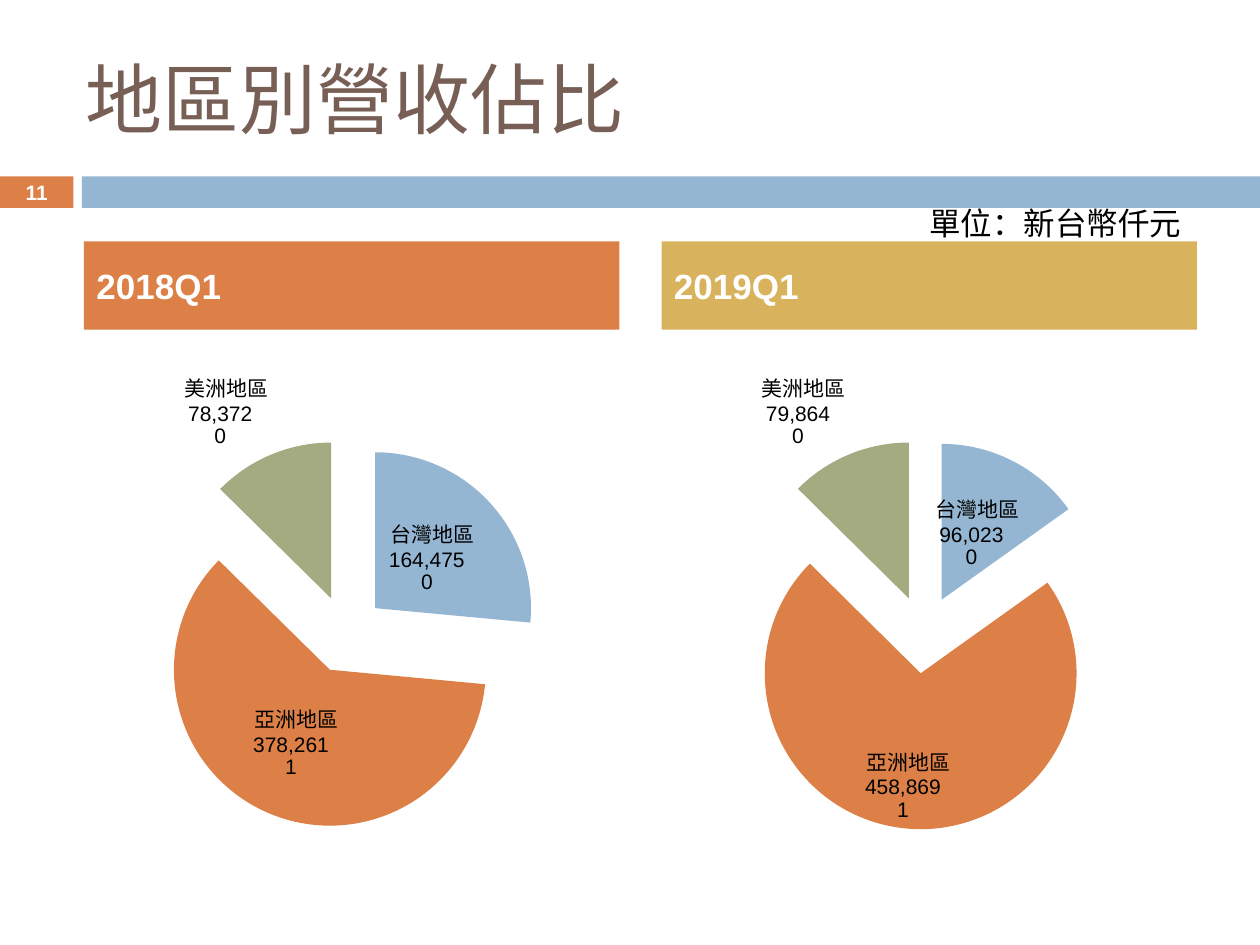
"""Build the slide comparing revenue share by region for two quarters."""
from lxml import etree
from pptx import Presentation
from pptx.chart.data import CategoryChartData
from pptx.dml.color import RGBColor
from pptx.enum.chart import XL_CHART_TYPE as ChartType, XL_LABEL_POSITION as LabelPos
from pptx.enum.shapes import MSO_SHAPE as Shape
from pptx.enum.text import MSO_ANCHOR as Anchor, PP_ALIGN as Align
from pptx.oxml.ns import qn
from pptx.util import Pt

ORANGE = RGBColor(0xDD, 0x80, 0x47)
BLUE = RGBColor(0x94, 0xB6, 0xD2)
GOLD = RGBColor(0xD8, 0xB2, 0x5C)
GREEN = RGBColor(0xA5, 0xAB, 0x81)
BROWN = RGBColor(0x77, 0x5F, 0x55)
WHITE = RGBColor(0xFF, 0xFF, 0xFF)
BLACK = RGBColor(0, 0, 0)
FONT = "Arial"
VALUE_FORMAT = r"#,##0\ _);[Red]\(#,##0\)_);\-\ \ \ "
REGIONS = ["台灣地區", "亞洲地區", "美洲地區"]
SLICE_COLORS = [BLUE, ORANGE, GREEN]
PLOT_AREA = {"x": 0.09, "y": 0.21, "w": 0.8, "h": 0.79}
QUARTERS = [
    ("2018Q1", 48, ORANGE, [164475, 378261, 78372],
     [LabelPos.CENTER, LabelPos.CENTER, LabelPos.OUTSIDE_END]),
    ("2019Q1", 378, GOLD, [96023, 458869, 79864],
     [LabelPos.CENTER, LabelPos.INSIDE_END, LabelPos.OUTSIDE_END]),
]

deck = Presentation()
deck.slide_width, deck.slide_height = Pt(720), Pt(540)
page = deck.slides.add_slide(deck.slide_layouts[6])


def add_bar(left, top, width, height, color):
    bar = page.shapes.add_shape(Shape.RECTANGLE, Pt(left), Pt(top), Pt(width), Pt(height))
    bar.shadow.inherit = False
    bar.fill.solid()
    bar.fill.fore_color.rgb = color
    bar.line.fill.background()
    return bar


def write(shape, text, size, color, bold=False, align=Align.LEFT, anchor=Anchor.MIDDLE):
    frame = shape.text_frame
    frame.text = text
    frame.word_wrap = True
    frame.vertical_anchor = anchor
    para = frame.paragraphs[0]
    para.alignment = align
    font = para.runs[0].font
    font.name, font.size, font.bold = FONT, Pt(size), bold
    font.color.rgb = color


number_bar = add_bar(0, 100.8, 42, 18, ORANGE)
number_bar.text_frame.margin_top = number_bar.text_frame.margin_bottom = 0
write(number_bar, "11", 11.9, WHITE, bold=True, align=Align.CENTER)
add_bar(46.8, 100.8, 673.2, 18, BLUE)

title = page.shapes.add_textbox(Pt(42), Pt(21.6), Pt(642), Pt(68.4))
write(title, "地區別營收佔比", 44, BROWN)

for quarter, left, header_color, revenues, positions in QUARTERS:
    write(add_bar(left, 138, 306, 50.4, header_color), quarter, 20, WHITE, bold=True)

    data = CategoryChartData(number_format=VALUE_FORMAT)
    data.categories = REGIONS
    data.add_series("Series 1", revenues)
    chart = page.shapes.add_chart(
        ChartType.PIE, Pt(left), Pt(192), Pt(306), Pt(282), data).chart
    chart.has_title = chart.has_legend = False
    chart.font.name, chart.font.size = FONT, Pt(10)
    chart.font.color.rgb = BLACK

    plot = chart.plots[0]
    plot.vary_by_categories = True
    plot_area = chart.element.find(".//" + qn("c:plotArea"))
    for old_layout in plot_area.findall(qn("c:layout")):
        plot_area.remove(old_layout)
    layout = etree.Element(qn("c:layout"))
    plot_area.insert(0, layout)
    manual = etree.SubElement(layout, qn("c:manualLayout"))
    etree.SubElement(manual, qn("c:layoutTarget"), val="inner")
    for side in "xy":
        etree.SubElement(manual, qn(f"c:{side}Mode"), val="edge")
    for side, share in PLOT_AREA.items():
        etree.SubElement(manual, qn(f"c:{side}"), val=str(share))

    series = plot.series[0]
    explosion = etree.Element(qn("c:explosion"), val="25")
    series.format.fill.solid()
    series.format.fill.fore_color.rgb = BLUE
    series.format.element.find(qn("c:spPr")).addnext(explosion) if hasattr(
        series.format, "element") else plot_area.find(
        ".//" + qn("c:ser") + "/" + qn("c:spPr")).addnext(explosion)

    for index, (color, position) in enumerate(zip(SLICE_COLORS, positions)):
        point = series.points[index]
        point.format.fill.solid()
        point.format.fill.fore_color.rgb = color
        label = point.data_label
        label.font.name, label.font.size = FONT, Pt(12)
        label.font.color.rgb = BLACK
        label.position = position

    for label_xml in plot_area.iter(qn("c:dLbl")):
        number_format = etree.Element(
            qn("c:numFmt"), formatCode=VALUE_FORMAT, sourceLinked="0")
        label_xml.find(qn("c:idx")).addnext(number_format)
        for part in ("showVal", "showCatName", "showPercent"):
            label_xml.find(qn(f"c:{part}")).set("val", "1")
        etree.SubElement(label_xml, qn("c:separator")).text = "\n"

unit = page.shapes.add_textbox(Pt(524), Pt(113), Pt(160), Pt(28.8))
write(unit, "單位：新台幣仟元", 18, BLACK, anchor=Anchor.TOP)
unit.text_frame.word_wrap = False

deck.save("out.pptx")
